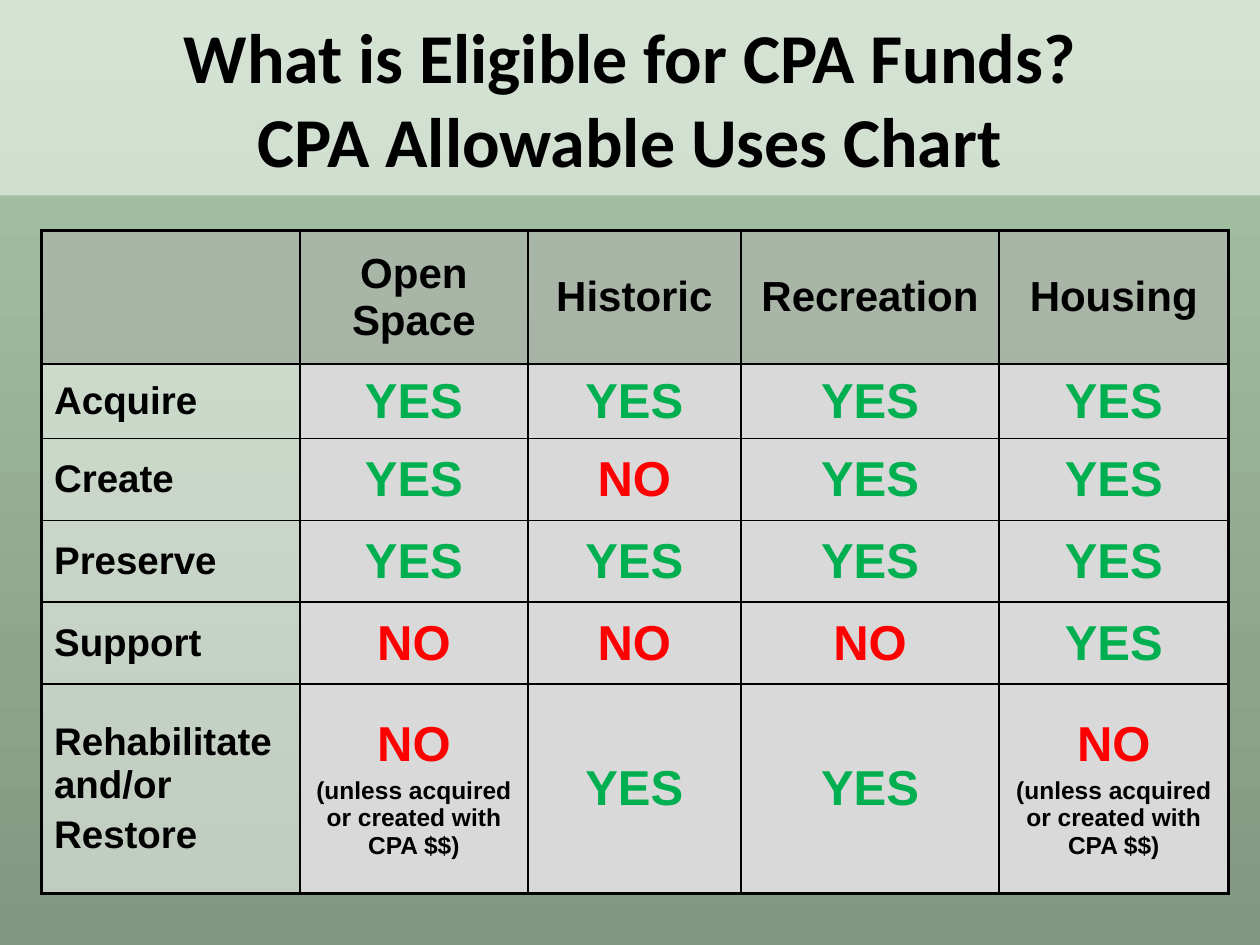
import pptx
import pptx.util
import pptx.dml.color
import pptx.enum.shapes
import pptx.enum.text
import pptx.oxml
import pptx.oxml.ns

INK = {"black": "000000", "white": "FFFFFF", "head": "B2B2B2", "cell": "D9D9D9",
       "YES": "00B050", "NO": "FF0000", "top": "AAC8A8", "base": "81977F"}
Pt, rgb = pptx.util.Pt, pptx.dml.color.RGBColor.from_string
ALIGN, MID = pptx.enum.text.PP_ALIGN, pptx.enum.text.MSO_ANCHOR.MIDDLE
NOTE = "(unless acquired or created with CPA $$)"
HEADS = ["", "Open Space", "Historic", "Recreation", "Housing"]
ROWS = [
    ["Acquire", "YES", "YES", "YES", "YES"],
    ["Create", "YES", "NO", "YES", "YES"],
    ["Preserve", "YES", "YES", "YES", "YES"],
    ["Support", "NO", "NO", "NO", "YES"],
    ["Rehabilitate and/or\nRestore", "NO\n" + NOTE, "YES", "YES", "NO\n" + NOTE],
]
# Column widths and row heights in percent of the slide
WIDE = [20.5, 18.1, 16.9, 20.5, 18.2]
TALL = [14.13, 7.87, 8.67, 8.67, 8.67, 22.13]


def paint(fill, name, alpha=None):
    fill.solid()
    fill.fore_color.rgb = rgb(INK[name])
    if alpha:
        tint = fill._xPr.find(".//" + pptx.oxml.ns.qn("a:srgbClr"))
        tint.append(pptx.oxml.parse_xml(
            f'<a:alpha {pptx.oxml.ns.nsdecls("a")} val="{alpha * 1000}"/>'))


def line(tag, width):
    return pptx.oxml.parse_xml(
        f'<a:{tag} {pptx.oxml.ns.nsdecls("a")} w="{Pt(width)}"><a:solidFill>'
        f'<a:srgbClr val="{INK["black"]}"/></a:solidFill></a:{tag}>')


deck = pptx.Presentation()
deck.slide_width, deck.slide_height = pptx.util.Inches(10), pptx.util.Inches(7.5)
slide = deck.slides.add_slide(deck.slide_layouts[6])
w, h = deck.slide_width / 100, deck.slide_height / 100

# Background, light to dark from top to bottom
back = slide.background.fill
back.gradient()
back.gradient_angle = 270
for stop, name, pos in zip(back.gradient_stops, ("top", "base"), (0, 1)):
    stop.color.rgb = rgb(INK[name])
    stop.position = pos

# Table grid
grid = slide.shapes.add_table(len(TALL), len(WIDE), int(3.3 * w), int(24.4 * h),
                              int(sum(WIDE) * w), int(sum(TALL) * h)).table
grid.first_row = grid.horz_banding = False
for col, size in zip(grid.columns, WIDE):
    col.width = int(size * w)
for row, size in zip(grid.rows, TALL):
    row.height = int(size * h)

# Table cells
for r, words in enumerate([HEADS] + ROWS):
    for c, text in enumerate(words):
        cell = grid.cell(r, c)
        cell.vertical_anchor = MID
        if r == 0:
            paint(cell.fill, "head", 50)
        elif c == 0:
            paint(cell.fill, "white", 50)
        else:
            paint(cell.fill, "cell")

        # Thick on the outer edge, thin inside
        edges = {"lnL": c == 0, "lnR": c == len(WIDE) - 1,
                 "lnT": r == 0, "lnB": r == len(TALL) - 1}
        for i, (tag, outer) in enumerate(edges.items()):
            cell._tc.tcPr.insert(i, line(tag, 2.25 if outer else 1))

        for i, part in enumerate(text.split("\n") if text else []):
            para = cell.text_frame.paragraphs[0] if i == 0 else cell.text_frame.add_paragraph()
            size = 24 if r == 0 else 22 if c == 0 else 14 if part == NOTE else 28
            para.alignment = ALIGN.LEFT if r and c == 0 else ALIGN.CENTER
            para.space_before = Pt(size * 0.2)
            run = para.add_run()
            run.text = part
            font = run.font
            font.name, font.size, font.bold = "Arial", Pt(size), True
            font.color.rgb = rgb(INK.get(part, INK["black"]))
            if part in ("YES", "NO"):
                font._element.insert(0, line("ln", 0.5))

# Title band
band = slide.shapes.add_shape(pptx.enum.shapes.MSO_SHAPE.RECTANGLE, 0, 0,
                              deck.slide_width, int(20.67 * h))
band.shadow.inherit = False
band.line.fill.background()
paint(band.fill, "white", 50)
frame = band.text_frame
frame.word_wrap, frame.vertical_anchor = True, MID
for i, text in enumerate(["What is Eligible for CPA Funds?", "CPA Allowable Uses Chart"]):
    para = frame.paragraphs[0] if i == 0 else frame.add_paragraph()
    para.alignment = ALIGN.CENTER
    run = para.add_run()
    run.text = text
    run.font.name, run.font.size, run.font.bold = "Calibri", Pt(40), True
    run.font.color.rgb = rgb(INK["black"])

deck.save("out.pptx")
